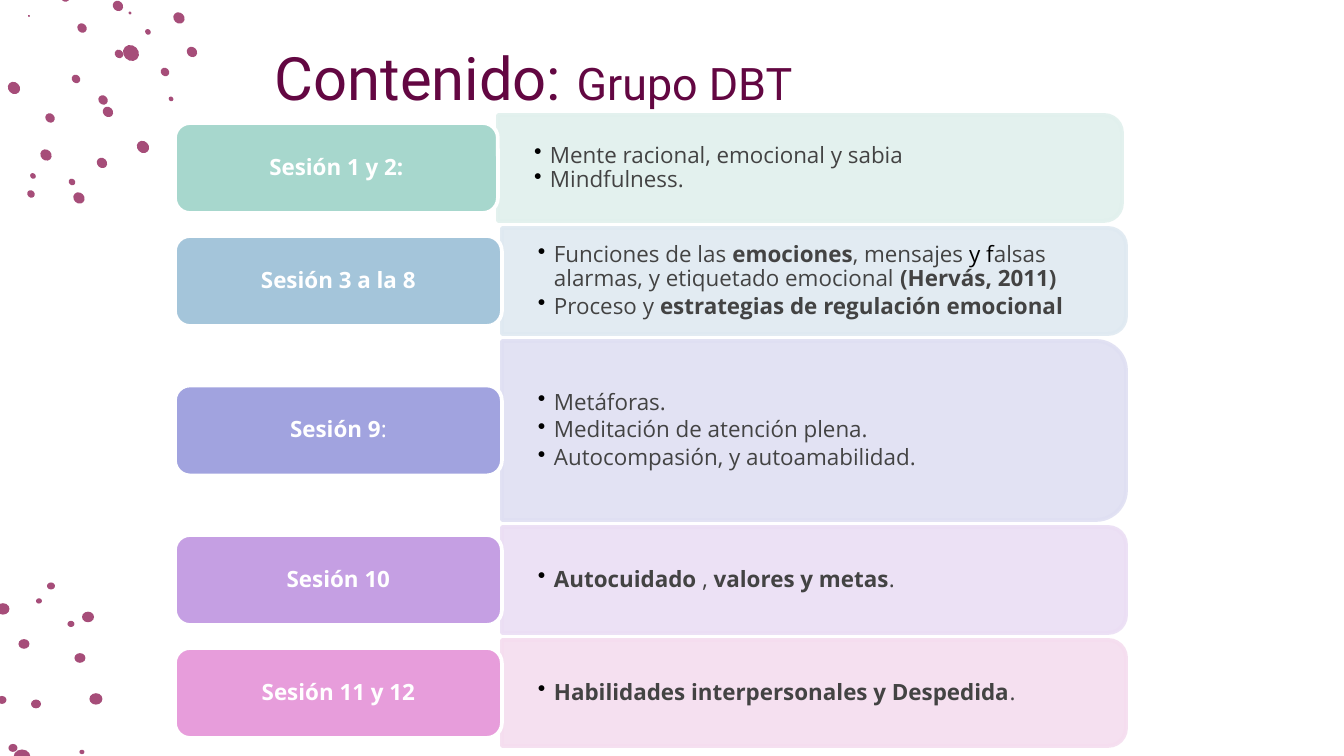
import pptx
import pptx.dml.color
import pptx.enum.shapes
import pptx.enum.text
import pptx.oxml.ns
import pptx.util
from lxml import etree

COLORS = {"title": "630742", "dot": "A64D79", "body": "434343", "black": "000000", "white": "FFFFFF"}
BOLD = {"bold": True}
BLACK = {"color": COLORS["black"]}

TITLE = [("Contenido: ", {"size": 32}), ("Grupo DBT", {"size": 24})]

SESSIONS = [
    {"label": [("Sesión 1 y 2:", BOLD)], "dark": "A7D7CD", "light": "E1F0ED",
     "left": 498, "height": 106, "before": 0,
     "topics": [[("Mente racional, emocional y sabia", {})], [("Mindfulness.", {})]]},
    {"label": [("Sesión 3 a la 8", BOLD)], "dark": "A4C5DA", "light": "DFE9F1",
     "left": 502, "height": 106, "before": 1.8,
     "topics": [[("Funciones de las ", {}), ("emociones", BOLD), (", mensajes", {}), (" y f", BLACK),
                 ("alsas alarmas, y etiquetado emocional ", {}), ("(Hervás, 2011)", BOLD)],
                [("Proceso y ", {}), ("estrategias de regulación emocional", BOLD)]]},
    {"label": [("Sesión 9", BOLD), (":", {})], "dark": "A1A3DF", "light": "DFDFF2",
     "left": 502, "height": 179, "before": 1.8,
     "topics": [[("Metáforas.", {})], [("Meditación de atención plena.", {})],
                [("Autocompasión, y autoamabilidad.", {})]]},
    {"label": [("Sesión 10", BOLD)], "dark": "C59FE3", "light": "EBDEF4",
     "left": 502, "height": 106, "before": 0,
     "topics": [[("Autocuidado", BOLD), (" , ", {}), ("valores y metas", BOLD), (".", {})]]},
    {"label": [("Sesión 11 y 12", BOLD)], "dark": "E79DDB", "light": "F5DDEF",
     "left": 502, "height": 106, "before": 0,
     "topics": [[("Habilidades interpersonales y Despedida", BOLD), (".", {})]]},
]

UPPER_DOTS = [
    (131, 53, 17), (148, 32, 6), (130, 13, 3), (118, 6, 11), (82, 28, 10), (119, 54, 9),
    (76, 79, 9), (103, 100, 10), (108, 112, 11), (50, 118, 10), (102, 163, 11), (46, 155, 12),
    (72, 182, 7), (79, 198, 12), (33, 176, 6), (31, 194, 8), (143, 147, 13), (29, 16, 2),
    (65, -3, 10), (179, 18, 12), (192, 52, 11), (165, 72, 9), (171, 99, 5), (14, 88, 13),
]
LOWER_DOTS = [
    (22, 757, 17), (13, 748, 9), (2, 700, 9), (36, 704, 10), (24, 644, 11), (80, 658, 11),
    (71, 624, 7), (88, 617, 12), (39, 601, 6), (51, 586, 8), (96, 699, 13), (82, 752, 5), (3, 609, 13),
]

FIRST_TOP, GAP = 115, 7
LABEL_LEFT, LABEL_HEIGHT = 175, 90
PANEL_WIDTH = 624
INDENT = 16


def px(value):
    return round(value * 914400 / 134.4)


def rgb(color):
    return pptx.dml.color.RGBColor.from_string(color)


def add_child(parent, tag, **attributes):
    return etree.SubElement(parent, pptx.oxml.ns.qn(tag), attributes)


def add_bullet(paragraph):
    paragraph.level = 1
    properties = paragraph._p.get_or_add_pPr()
    properties.set("marL", str(px(INDENT)))
    properties.set("indent", str(-px(INDENT)))
    add_child(add_child(properties, "a:buClr"), "a:srgbClr", val=COLORS["black"])
    add_child(properties, "a:buChar", char="•")


def write_text(shape, paragraphs, font="Open Sans", size=12, color=COLORS["body"],
               centered=False, bullets=False, spacing=0.9, before=0, insets=(7, 3)):
    frame = shape.text_frame
    frame.word_wrap = True
    frame.vertical_anchor = pptx.enum.text.MSO_ANCHOR.MIDDLE
    frame.margin_left = frame.margin_right = px(insets[0])
    frame.margin_top = frame.margin_bottom = px(insets[1])
    alignment = pptx.enum.text.PP_ALIGN
    for index, runs in enumerate(paragraphs):
        paragraph = frame.add_paragraph() if index else frame.paragraphs[0]
        if bullets:
            add_bullet(paragraph)
        paragraph.alignment = alignment.CENTER if centered else alignment.LEFT
        paragraph.line_spacing = spacing
        paragraph.space_before = pptx.util.Pt(before if index else 0)
        for text, style in runs:
            run = paragraph.add_run()
            run.text = text
            run.font.name = font
            run.font.size = pptx.util.Pt(style.get("size", size))
            run.font.bold = style.get("bold", False)
            run.font.color.rgb = rgb(style.get("color", color))


def add_shape(slide, kind, center_x, center_y, width, height, fill, line=None, rotation=0, alpha=None):
    shape = slide.shapes.add_shape(kind, px(center_x - width / 2), px(center_y - height / 2),
                                   px(width), px(height))
    shape.shadow.inherit = False
    shape.rotation = rotation
    shape.fill.solid()
    shape.fill.fore_color.rgb = rgb(fill)
    if line:
        shape.line.color.rgb = rgb(line)
        shape.line.width = pptx.util.Pt(2)
    else:
        shape.line.fill.background()
    if alpha:
        for color in shape._element.spPr.iter(pptx.oxml.ns.qn("a:srgbClr")):
            add_child(color, "a:alpha", val=str(alpha * 1000))
    return shape


def add_textbox(slide, left, top, width, height):
    return slide.shapes.add_textbox(px(left), px(top), px(width), px(height))


def add_session(slide, session, top):
    kinds = pptx.enum.shapes.MSO_SHAPE
    left, height = session["left"], session["height"]
    middle = top + height / 2
    panel = add_shape(slide, kinds.ROUND_2_SAME_RECTANGLE, left + PANEL_WIDTH / 2, middle,
                      height, PANEL_WIDTH, session["light"], session["light"], 90, 90)
    panel.adjustments[0] = 0.167
    panel.adjustments[1] = 0
    topics = add_textbox(slide, left, top + 5, PANEL_WIDTH - 6, height - 10)
    write_text(topics, session["topics"], bullets=True, before=session["before"], insets=(36, 19))
    label = add_shape(slide, kinds.ROUNDED_RECTANGLE, (LABEL_LEFT + left) / 2, middle,
                      left - LABEL_LEFT, LABEL_HEIGHT, session["dark"], COLORS["white"])
    label.adjustments[0] = 0.167
    write_text(label, [session["label"]], color=COLORS["white"], centered=True)


def main():
    presentation = pptx.Presentation()
    presentation.slide_width = px(1344)
    presentation.slide_height = px(756)
    slide = presentation.slides.add_slide(presentation.slide_layouts[6])

    for dots, rotation in ((UPPER_DOTS, 45), (LOWER_DOTS, 0)):
        for center_x, center_y, size in dots:
            add_shape(slide, pptx.enum.shapes.MSO_SHAPE.OVAL, center_x, center_y,
                      size, size * 0.88, COLORS["dot"], rotation=rotation)

    title = add_textbox(slide, -46, 50, 1159, 54)
    write_text(title, [TITLE], font="Roboto", color=COLORS["title"], centered=True,
               spacing=1.0, insets=(10, 5))

    top = FIRST_TOP
    for session in SESSIONS:
        add_session(slide, session, top)
        top += session["height"] + GAP

    presentation.save("out.pptx")


if __name__ == "__main__":
    main()
